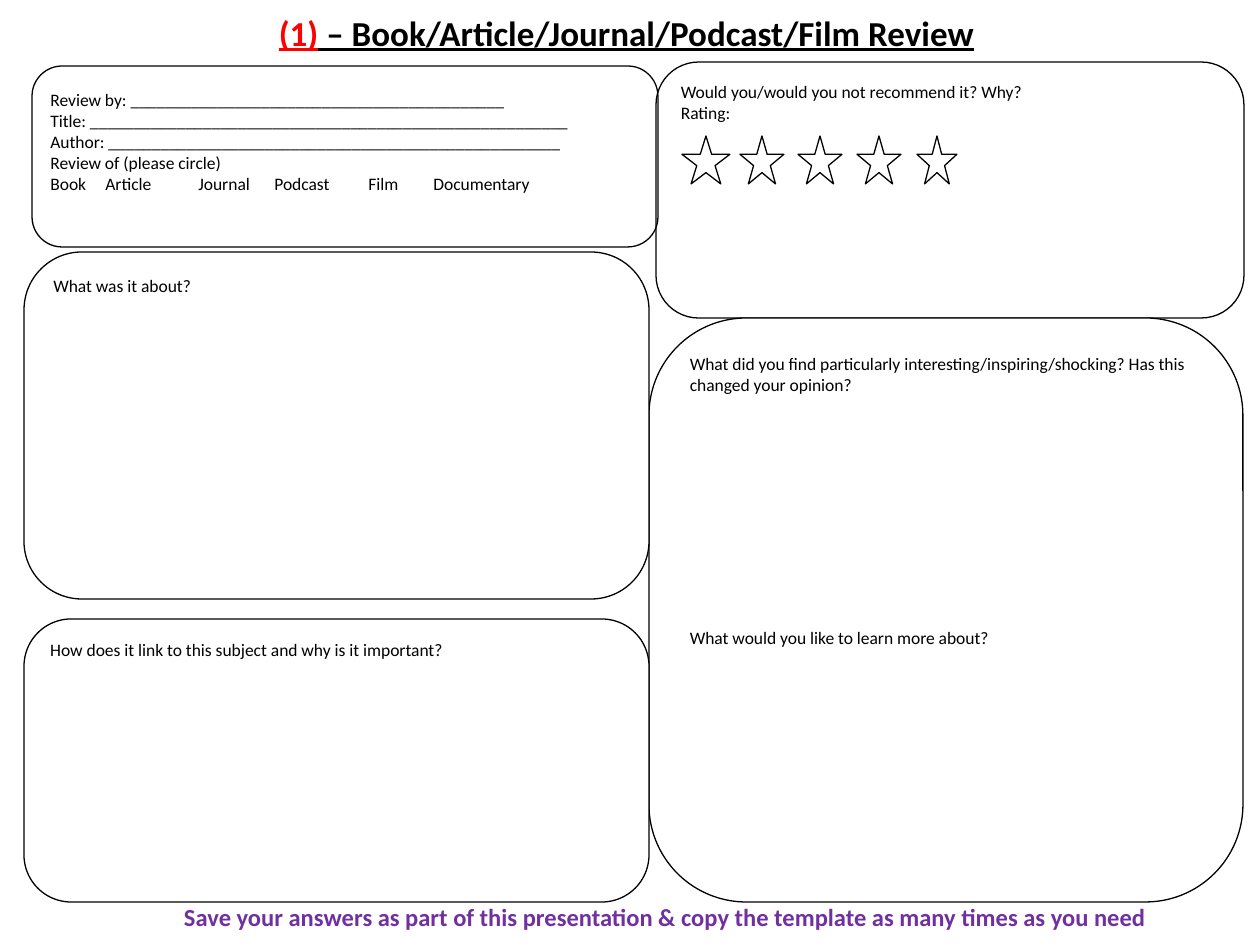
from lxml import etree
from pptx import Presentation
from pptx.dml.color import RGBColor
from pptx.enum.shapes import MSO_SHAPE
from pptx.enum.text import MSO_ANCHOR, PP_ALIGN
from pptx.oxml.ns import qn
from pptx.util import Pt

PANEL = MSO_SHAPE.FLOWCHART_ALTERNATE_PROCESS
RECT = MSO_SHAPE.RECTANGLE
STAR = MSO_SHAPE.STAR_5_POINT
TOP = MSO_ANCHOR.TOP
LEFT, CENTER = PP_ALIGN.LEFT, PP_ALIGN.CENTER
PX = 914400 / 126

theme = {
    "font": "Calibri",
    "ink": RGBColor(0, 0, 0),
    "paper": RGBColor(255, 255, 255),
    "red": RGBColor(255, 0, 0),
    "purple": RGBColor(0x70, 0x30, 0xA0),
    "body": Pt(10),
    "title": Pt(20),
    "foot": Pt(14),
    "line": Pt(0.75),
}


def draw(kind, box, fill=True, line=True):
    shape = slide.shapes.add_shape(kind, *[round(n * PX) for n in box])
    shape.shadow.inherit = False
    if fill:
        shape.fill.solid()
        shape.fill.fore_color.rgb = theme["paper"]
    else:
        shape.fill.background()
    if line:
        shape.line.color.rgb = theme["ink"]
        shape.line.width = theme["line"]
    else:
        shape.line.fill.background()
    return shape


def write(shape, text, size="body", color="ink", align=LEFT, bold=False):
    frame = shape.text_frame
    frame.word_wrap = True
    frame.vertical_anchor = TOP
    frame.text = text
    for para in frame.paragraphs:
        para.alignment = align
        for run in para.runs:
            run.font.name = theme["font"]
            run.font.size = theme[size]
            run.font.bold = bold
            run.font.color.rgb = theme[color]
    return frame.paragraphs


deck = Presentation()
deck.slide_width = round(1260 * PX)
deck.slide_height = round(945 * PX)
slide = deck.slides.add_slide(deck.slide_layouts[6])

panels = [
    ((656, 62, 588, 256), "Would you/would you not recommend it? Why?\nRating:"),
    ((649, 318, 594, 584),
     "What did you find particularly interesting/inspiring/shocking? "
     "Has this changed your opinion?\nWhat would you like to learn more about?"),
    ((24, 619, 625, 283), "How does it link to this subject and why is it important?"),
    ((24, 252, 625, 347), "What was it about?"),
]
for box, text in panels:
    paras = write(draw(PANEL, box), text)
    if "learn more" in text:
        paras[-1].space_before = Pt(133)

draw(PANEL, (32, 66, 626, 181), fill=False)

title = draw(RECT, (173, 5, 907, 50), line=False)
head = write(title, "(1)", "title", "red", CENTER, True)[0]
rest = head.add_run()
rest.text = " – Book/Article/Journal/Podcast/Film Review"
rest.font.name = theme["font"]
rest.font.size = theme["title"]
rest.font.bold = True
rest.font.color.rgb = theme["ink"]
for run in head.runs:
    run.font.underline = True

form = [
    "Review by: " + "_" * 43,
    "Title: " + "_" * 55,
    "Author: " + "_" * 52,
    "Review of (please circle)",
    "Book\tArticle\tJournal\tPodcast\tFilm\tDocumentary",
]
paras = write(draw(RECT, (38, 83, 611, 130), line=False), "\n".join(form))
tabs = etree.SubElement(paras[-1]._p.get_or_add_pPr(), qn("a:tabLst"))
for stop in (55, 148, 224, 318, 383):
    etree.SubElement(tabs, qn("a:tab"), pos=str(round(stop * PX)), algn="l")

for left, width in ((682, 48), (740, 44), (798, 44), (857, 44), (917, 40)):
    draw(STAR, (left, 136, width, 48))

foot = slide.shapes.add_textbox(*[round(n * PX) for n in (38, 896, 1260, 43)])
write(foot, "Save your answers as part of this presentation & copy the template "
      "as many times as you need ", "foot", "purple", CENTER, True)

deck.save("out.pptx")
